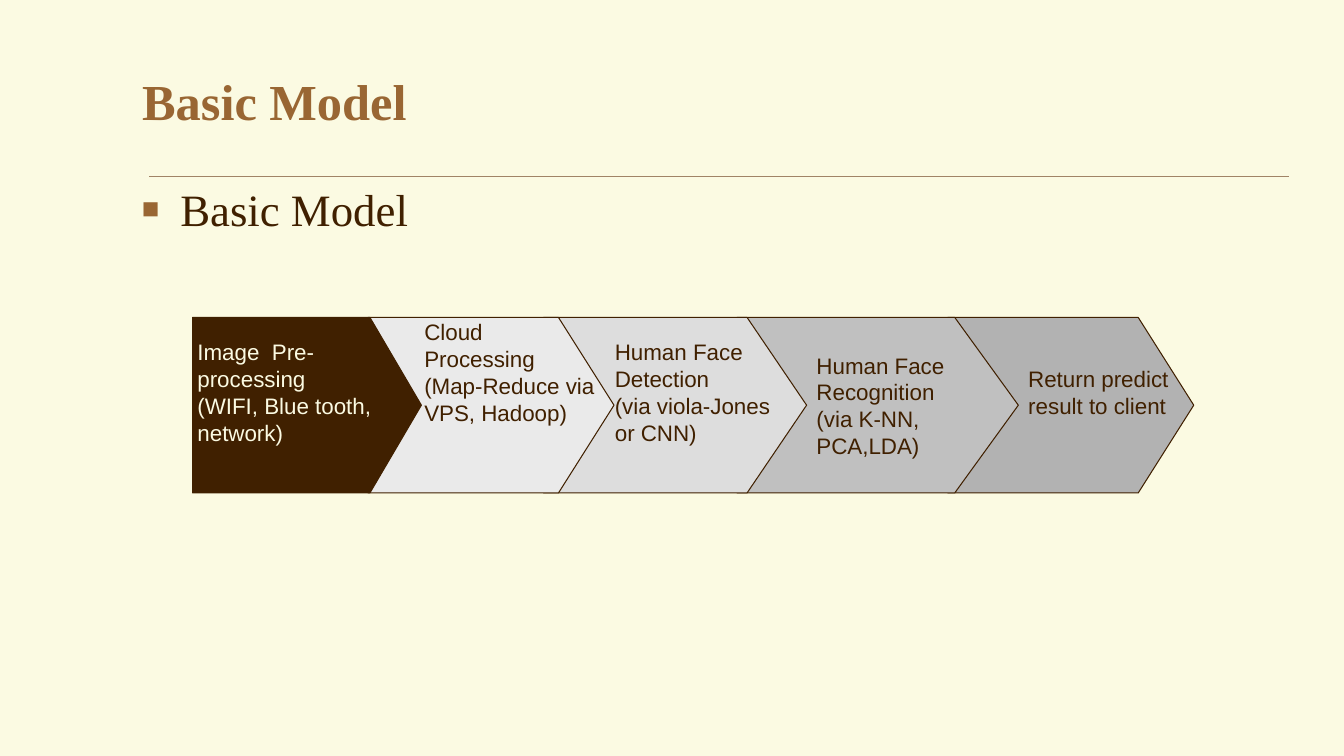
from lxml import etree
from pptx import Presentation
from pptx.dml.color import RGBColor
from pptx.enum.shapes import MSO_CONNECTOR as Connector, MSO_SHAPE as Shape
from pptx.enum.text import MSO_ANCHOR as Anchor, PP_ALIGN as Align
from pptx.oxml.ns import qn
from pptx.util import Pt

PX = 9144  # 100 px to the inch

CREAM = RGBColor(0xFB, 0xFA, 0xE2)
BROWN = RGBColor(0x40, 0x20, 0x00)
COPPER = RGBColor(0x99, 0x66, 0x33)
TAN = RGBColor(0xA0, 0x83, 0x66)
PALE = RGBColor(0xEA, 0xEA, 0xEA)
LIGHT = RGBColor(0xDD, 0xDD, 0xDD)
SILVER = RGBColor(0xC0, 0xC0, 0xC0)
GREY = RGBColor(0xB2, 0xB2, 0xB2)

TITLE_FORMAT = {"name": "Times New Roman", "size": Pt(36), "bold": True}
BULLET_FORMAT = {"name": "Times New Roman", "size": Pt(32), "bold": False}
STEP_FORMAT = {"name": "Arial", "size": Pt(16), "bold": False}

# Arrow left, width and point length; label box relative to the arrow strip
STEPS = [
    (0, 227, 51, BROWN, CREAM, (-5, 16, 206, 118),
     ["Image  Pre- processing", "(WIFI, Blue tooth,", "network)"]),
    (174, 244, 55, PALE, BROWN, (220, -4, 189, 144),
     ["Cloud Processing", "(Map-Reduce via VPS, Hadoop)"]),
    (348, 261, 59, LIGHT, BROWN, (409, 16, 174, 118),
     ["Human Face", "Detection", "(via viola-Jones or CNN)"]),
    (540, 279, 63, SILVER, BROWN, (609, 29, 190, 118),
     ["Human Face", "Recognition", "(via K-NN, PCA,LDA)"]),
    (749, 244, 55, GREY, BROWN, (819, 42, 170, 64),
     ["Return predict result to client"]),
]


def px(*lengths):
    return [length * PX for length in lengths]


def write(frame, lines, color, formats, anchor=Anchor.TOP):
    frame.word_wrap = True
    frame.vertical_anchor = anchor
    for index, line in enumerate(lines):
        para = frame.add_paragraph() if index else frame.paragraphs[0]
        para.alignment = Align.LEFT
        span = para.add_run()
        span.text = line
        span.font.color.rgb = color
        for name, value in formats.items():
            setattr(span.font, name, value)


def add_title(page, left, top, width, height):
    title = page.shapes.title
    title.left, title.top, title.width, title.height = px(left, top, width, height)
    write(title.text_frame, ["Basic Model"], COPPER, TITLE_FORMAT, Anchor.MIDDLE)


def add_rule(page, left, top, width):
    rule = page.shapes.add_connector(
        Connector.STRAIGHT, *px(left, top, left + width, top))
    rule.line.color.rgb = TAN
    rule.line.width = Pt(0.25)
    etree.SubElement(rule._element.spPr, qn("a:effectLst"))


def add_bullet(page, left, top, width, height):
    box = page.shapes.add_textbox(*px(left, top, width, height))
    props = box.text_frame.paragraphs[0]._p.get_or_add_pPr()
    props.set("marL", str(38 * PX))
    props.set("indent", str(-38 * PX))
    color = etree.SubElement(props, qn("a:buClr"))
    etree.SubElement(color, qn("a:srgbClr"), val=str(COPPER))
    etree.SubElement(props, qn("a:buSzPct"), val="65000")
    etree.SubElement(props, qn("a:buFont"), typeface="Arial")
    etree.SubElement(props, qn("a:buChar"), char="■")
    write(box.text_frame, ["Basic Model"], BROWN, BULLET_FORMAT)


def add_process(page, left, top, height):
    group = page.shapes.add_group_shape()
    # Later arrows lie beneath earlier ones
    for offset, width, point, fill, *_ in reversed(STEPS):
        arrow = group.shapes.add_shape(
            Shape.PENTAGON, *px(left + offset, top, width, height))
        arrow.adjustments[0] = point / height
        arrow.shadow.inherit = False
        arrow.fill.solid()
        arrow.fill.fore_color.rgb = fill
        arrow.line.color.rgb = BROWN
        arrow.line.width = Pt(0.75)
    # Labels on top of the arrows
    for *_, color, (dx, dy, width, tall), lines in STEPS:
        label = group.shapes.add_textbox(*px(left + dx, top + dy, width, tall))
        label.text_frame.margin_right = 7 * PX
        write(label.text_frame, lines, color, STEP_FORMAT)


def main():
    deck = Presentation()
    deck.slide_width, deck.slide_height = px(1333, 750)
    page = deck.slides.add_slide(deck.slide_layouts[5])
    page.background.fill.solid()
    page.background.fill.fore_color.rgb = CREAM
    add_rule(page, 148, 175, 1130)
    add_title(page, 131, 44, 1135, 111)
    add_bullet(page, 131, 175, 1135, 476)
    add_process(page, 191, 315, 174)
    deck.save("out.pptx")


if __name__ == "__main__":
    main()
